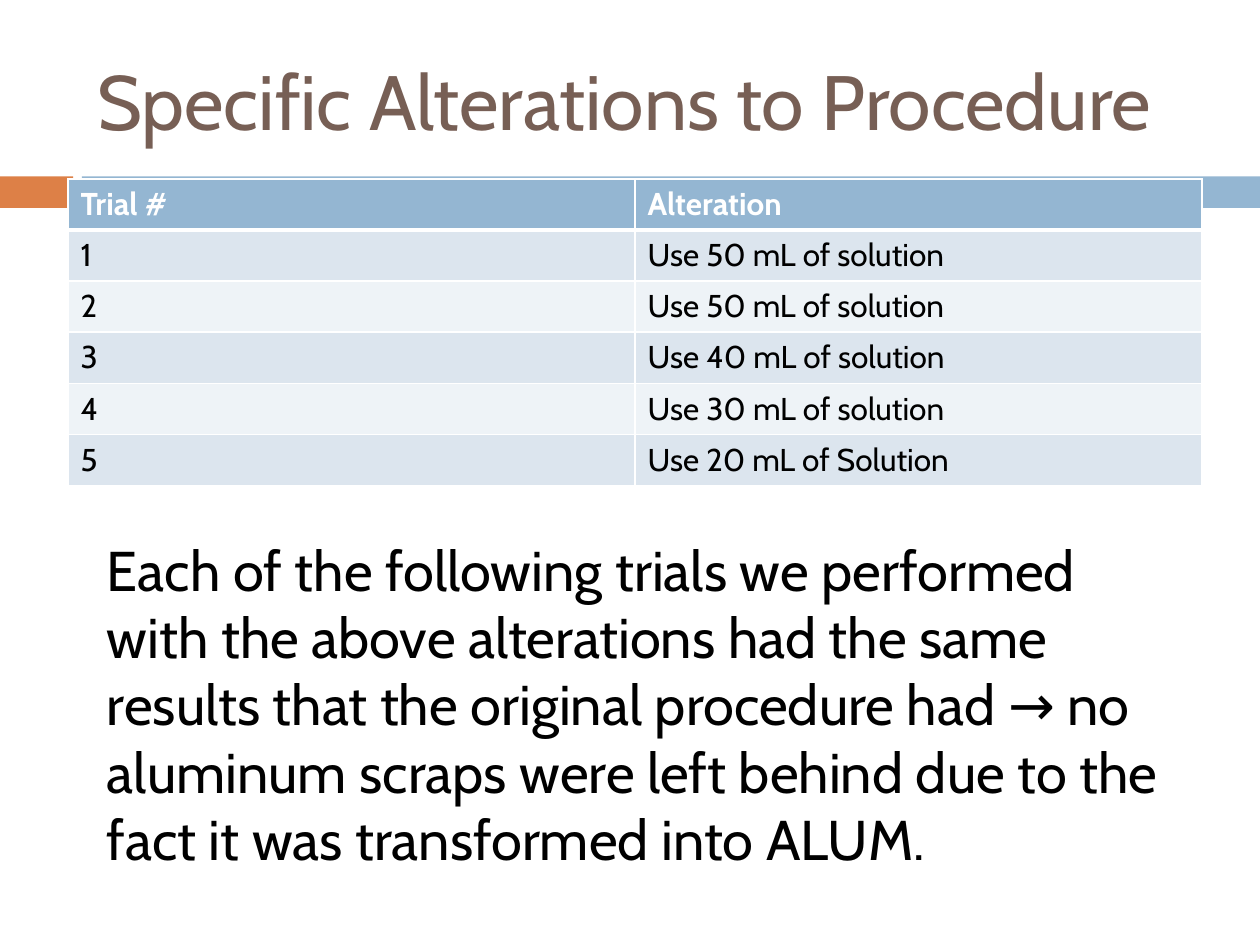
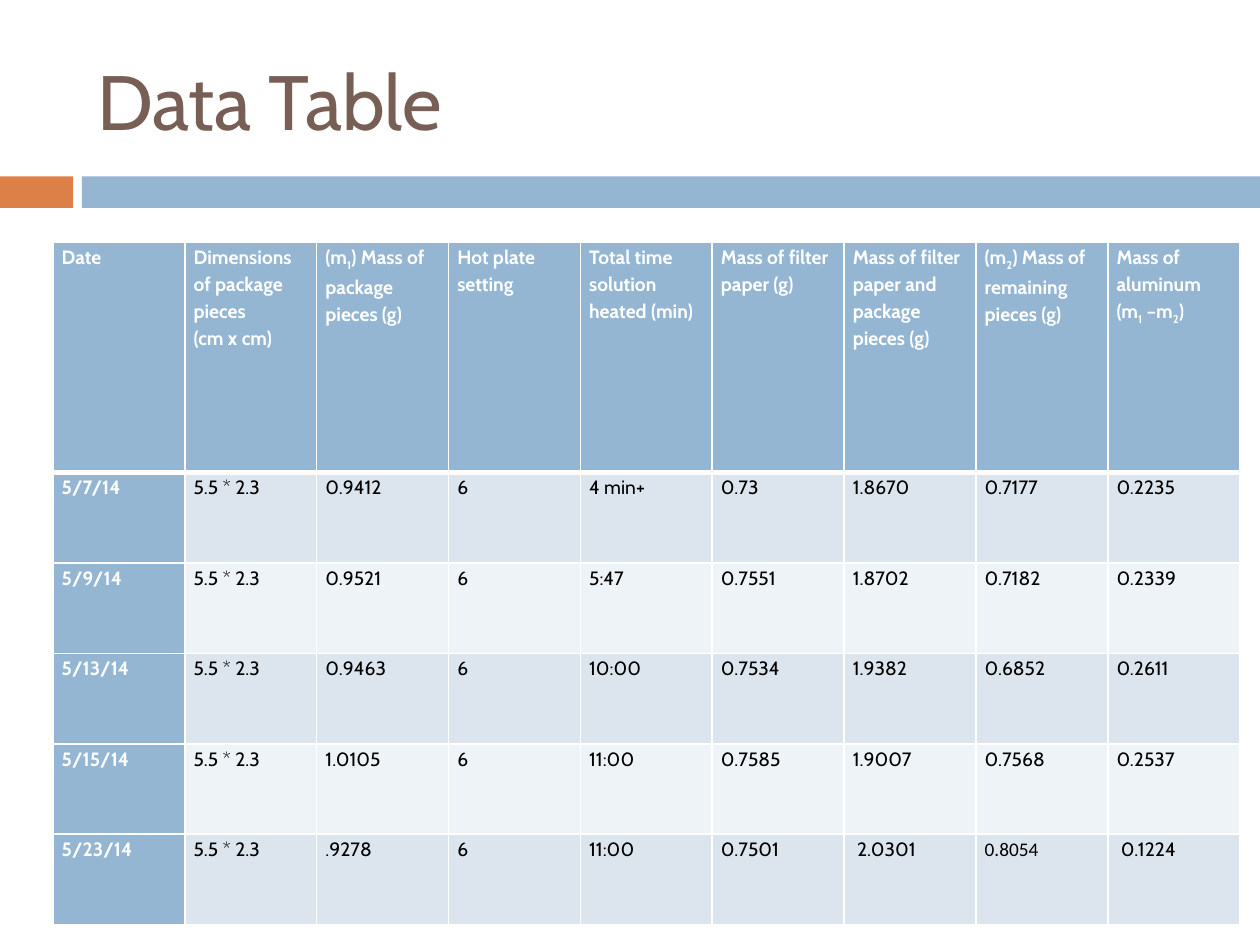
import pptx
import pptx.util
import pptx.dml.color
import pptx.enum.shapes
import pptx.enum.text
import pptx.oxml

Inches = pptx.util.Inches
Pt = pptx.util.Pt

# Shared look
FONT = "Cabin"
BLUE, ORANGE, BROWN = "94B6D2", "DD8047", "775F55"
WHITE, BLACK = "FFFFFF", "000000"
STRIPES = ["DCE5EE", "EEF3F7"]
DRAWING_NS = "http://schemas.openxmlformats.org/drawingml/2006/main"
BANDS = [(0, 0.58, ORANGE), (0.65, 9.35, BLUE)]


def paint(target, color):
    """Give a fill or a font a solid colour."""
    if hasattr(target, "solid"):
        target.solid()
        target.fore_color.rgb = pptx.dml.color.RGBColor.from_string(color)
    else:
        target.color.rgb = pptx.dml.color.RGBColor.from_string(color)


def add_grid(page, rows, place, heights, size, insets, spacing=None, date_column=False):
    """Add a banded table; text between bars is set as a subscript."""
    left, top, width, height = place
    frame = page.shapes.add_table(len(rows), len(rows[0]), Inches(left), Inches(top),
                                  Inches(width), Inches(height))
    grid = frame.table
    grid.first_col = date_column
    for column in grid.columns:
        column.width = Inches(width / len(rows[0]))
    for r, texts in enumerate(rows):
        grid.rows[r].height = Inches(heights[r])
        for c, text in enumerate(texts):
            cell = grid.cell(r, c)
            heading = r == 0 or (date_column and c == 0)
            cell.margin_left = cell.margin_right = Inches(insets[0])
            cell.margin_top = cell.margin_bottom = Inches(insets[1])

            # White borders, thicker under the heading row
            for side in "LRTB":
                thick = (r, side) in [(0, "B"), (1, "T")]
                cell._tc.get_or_add_tcPr().append(pptx.oxml.parse_xml(
                    f'<a:ln{side} xmlns:a="{DRAWING_NS}" w="{Pt(3 if thick else 1)}">'
                    f'<a:solidFill><a:srgbClr val="{WHITE}"/></a:solidFill></a:ln{side}>'))
            paint(cell.fill, BLUE if heading else STRIPES[(r - 1) % 2])

            for p, line in enumerate(text.split("\n")):
                para = cell.text_frame.paragraphs[0] if p == 0 else cell.text_frame.add_paragraph()
                if spacing:
                    para.line_spacing = spacing
                for s, part in enumerate(line.split("|")):
                    span = para.add_run()
                    span.text = part
                    span.font.name = FONT
                    span.font.size = Pt(size)
                    span.font.bold = heading
                    paint(span.font, WHITE if heading else BLACK)
                    if s % 2:
                        span.font._element.set("baseline", "-25000")
    return grid


deck = pptx.Presentation()
deck.slide_width, deck.slide_height = Inches(10), Inches(7.5)

# Pages with title and bands
pages = []
for heading_text in ["Specific Alterations to Procedure", "Data Table"]:
    page = deck.slides.add_slide(deck.slide_layouts[5])
    pages.append(page)
    for left, width, color in BANDS:
        band = page.shapes.add_shape(pptx.enum.shapes.MSO_SHAPE.RECTANGLE, Inches(left),
                                     Inches(1.4), Inches(width), Inches(0.25))
        band.shadow.inherit = False
        paint(band.fill, color)
        band.line.fill.background()

    title = page.shapes.title
    title.left, title.top = Inches(0.67), Inches(0.25)
    title.width, title.height = Inches(8.92), Inches(1.08)
    title.text_frame.vertical_anchor = pptx.enum.text.MSO_ANCHOR.MIDDLE
    para = title.text_frame.paragraphs[0]
    para.alignment = pptx.enum.text.PP_ALIGN.LEFT
    span = para.add_run()
    span.text = heading_text
    span.font.name = FONT
    span.font.size = Pt(44)
    paint(span.font, BROWN)

alterations_page, data_page = pages

# Slide 1: alterations for each trial
alterations = [
    ["Trial #", "Alteration"],
    ["1", "Use 50 mL of solution"],
    ["2", "Use 50 mL of solution"],
    ["3", "Use 40 mL of solution"],
    ["4", "Use 30 mL of solution"],
    ["5", "Use 20 mL of Solution"],
]
add_grid(alterations_page, alterations, (0.54, 1.42, 9, 2.43), [2.43 / 6] * 6, 18, (0.1, 0.05))

# Slide 1: conclusion, starting below the table
box = alterations_page.shapes.add_textbox(Inches(0.75), Inches(3.67), Inches(8.58), Inches(3.33))
box.text_frame.word_wrap = True
box.text_frame.margin_top = Inches(0.58)
span = box.text_frame.paragraphs[0].add_run()
span.text = ("Each of the following trials we performed with the above alterations had the same "
             "results that the original procedure had → no aluminum scraps were left behind "
             "due to the fact it was transformed into ALUM.")
span.font.name = FONT
span.font.size = Pt(32)
paint(span.font, BLACK)

# Slide 2: measurements by date
measurements = [
    ["Date", "Dimensions of package pieces\n(cm x cm)", "(m|1|) Mass of package pieces (g)",
     "Hot plate setting", "Total time solution heated (min)", "Mass of filter paper (g)",
     "Mass of filter paper and package pieces (g)", "(m|2|) Mass of remaining pieces (g)",
     "Mass of aluminum (m|1| –m|2|)"],
    ["5/7/14", "5.5 * 2.3", "0.9412", "6", "4 min+", "0.73", "1.8670", "0.7177", "0.2235"],
    ["5/9/14", "5.5 * 2.3", "0.9521", "6", "5:47", "0.7551", "1.8702", "0.7182", "0.2339"],
    ["5/13/14", "5.5 * 2.3", "0.9463", "6", "10:00", "0.7534", "1.9382", "0.6852", "0.2611"],
    ["5/15/14", "5.5 * 2.3", "1.0105", "6", "11:00", "0.7585", "1.9007", "0.7568", "0.2537"],
    ["5/23/14", "5.5 * 2.3", ".9278", "6", "11:00", "0.7501", " 2.0301", "0.8054", " 0.1224"],
]
data_grid = add_grid(data_page, measurements, (0.42, 1.92, 9.42, 5.42),
                     [1.83] + [(5.42 - 1.83) / 5] * 5, 11, (0.07, 0), 1.15, True)
last_remaining = data_grid.cell(5, 7).text_frame.paragraphs[0].runs[0]
last_remaining.font.name = "Calibri"

deck.save("out.pptx")
